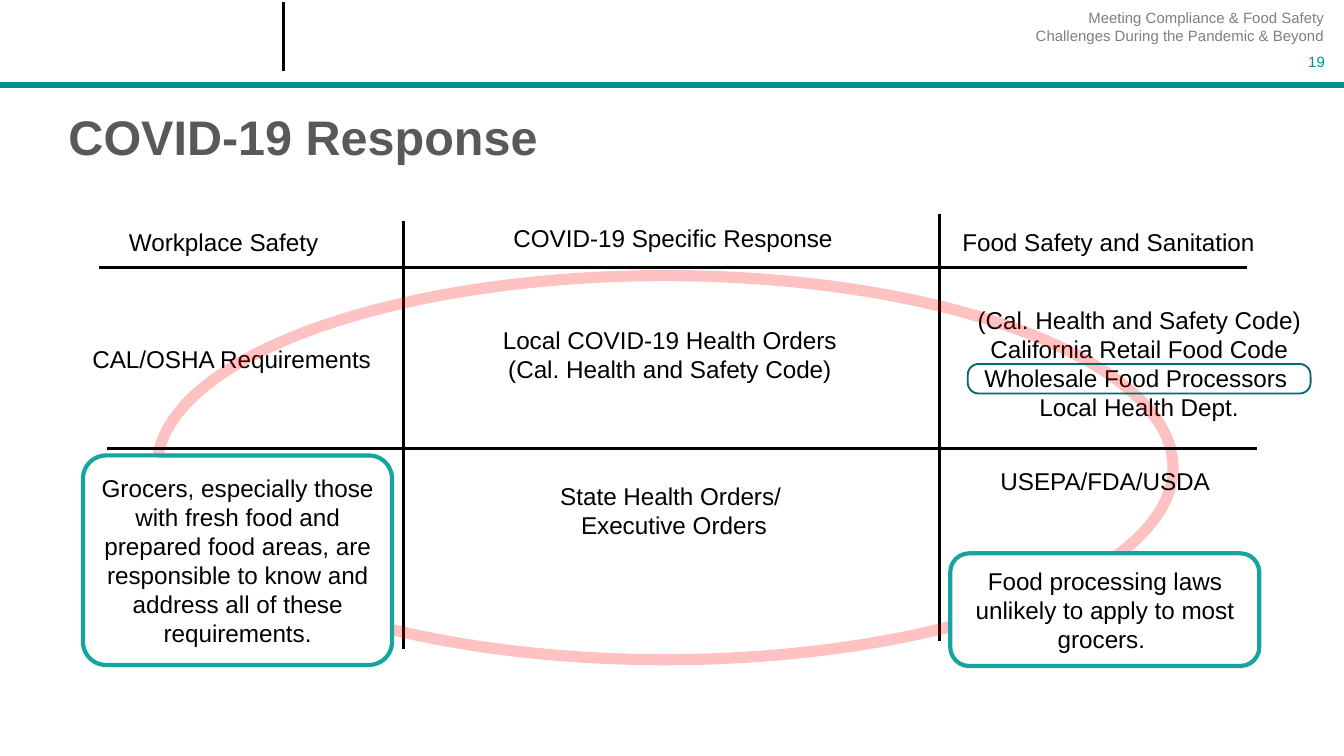
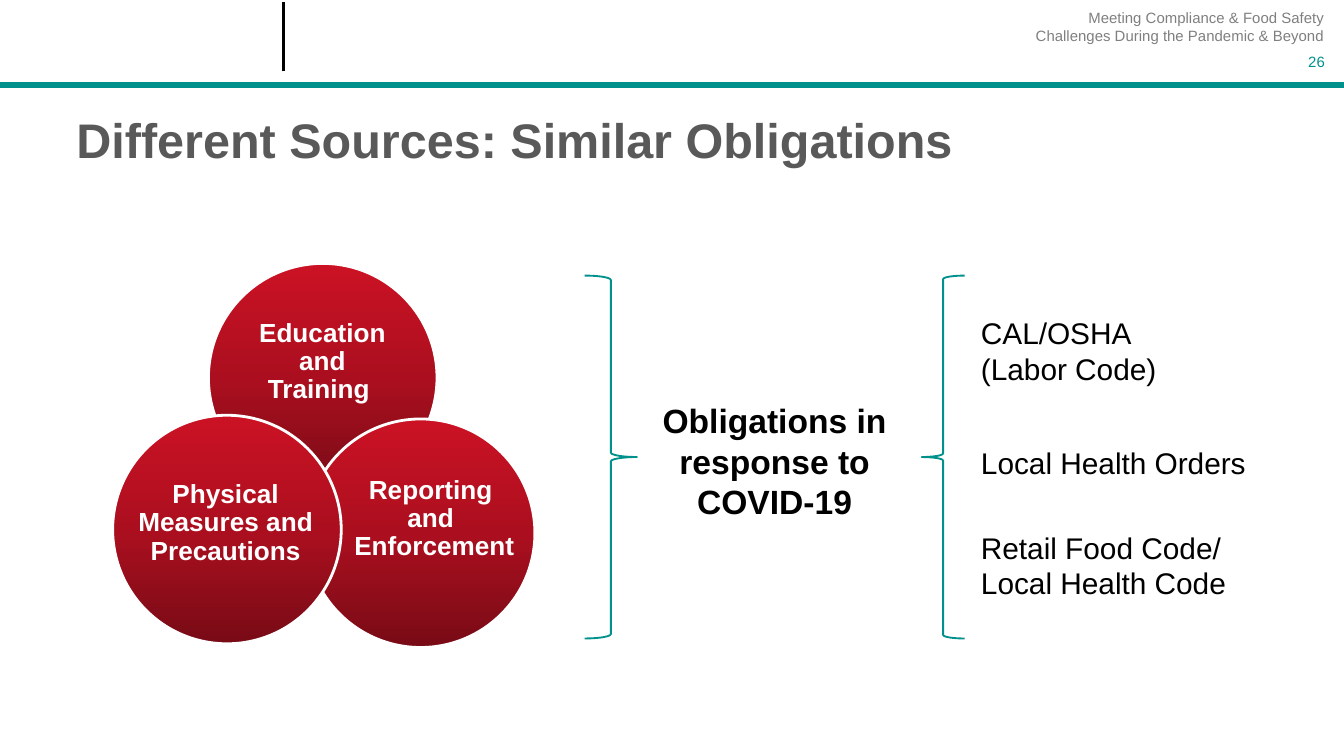
import copy

import pptx
import pptx.dml.color
import pptx.enum.shapes
import pptx.enum.text
import pptx.oxml.ns
import pptx.oxml.xmlchemy
import pptx.util
from lxml import etree

Cm = pptx.util.Cm
Pt = pptx.util.Pt
RGB = pptx.dml.color.RGBColor
SHAPE = pptx.enum.shapes.MSO_SHAPE
ALIGN = pptx.enum.text.PP_ALIGN
ANCHOR = pptx.enum.text.MSO_ANCHOR
qn = pptx.oxml.ns.qn

TEAL = RGB(0x00, 0x91, 0x8D)
AQUA = RGB(0x16, 0xA4, 0xA1)
PINE = RGB(0x00, 0x6B, 0x68)
BLACK = RGB(0, 0, 0)
WHITE = RGB(255, 255, 255)
SLATE = RGB(0x59, 0x59, 0x59)
GREY = RGB(0x7F, 0x7F, 0x7F)
RED = RGB(255, 0, 0)
REDS = [
    (0, RGB(0x78, 0x0B, 0x16)),
    (0.5, RGB(0xAB, 0x0F, 0x1F)),
    (1, RGB(0xCB, 0x12, 0x24)),
]
FONT = "Arial"
HEAD = "Meeting Compliance & Food Safety Challenges During the Pandemic & Beyond"


def write(frame, texts, size, color=BLACK, bold=False, align=ALIGN.CENTER,
          anchor=ANCHOR.TOP, space=None, wrap=True):
    frame.word_wrap = wrap
    frame.auto_size = pptx.enum.text.MSO_AUTO_SIZE.NONE
    frame.vertical_anchor = anchor
    for i, text in enumerate(texts):
        para = frame.paragraphs[0] if i == 0 else frame.add_paragraph()
        para.alignment = align
        if space:
            para.line_spacing = space
        for j, part in enumerate(text.split("\n")):
            if j:
                para.add_line_break()
            run = para.add_run()
            run.text = part
            run.font.name = FONT
            run.font.size = Pt(size)
            run.font.bold = bold
            run.font.color.rgb = color


def label(slide, place, texts, size=13, **style):
    box = slide.shapes.add_textbox(*map(Cm, place))
    write(box.text_frame, texts, size, **style)


def rule(slide, ends, color=BLACK, width=1.5):
    kind = pptx.enum.shapes.MSO_CONNECTOR.STRAIGHT
    line = slide.shapes.add_connector(kind, *map(Cm, ends))
    line.line.color.rgb = color
    line.line.width = Pt(width)
    etree.SubElement(line._element.spPr, qn("a:effectLst"))
    return line


def form(slide, kind, place, color, width, fill=None, adjust=None):
    shape = slide.shapes.add_shape(kind, *map(Cm, place))
    shape.shadow.inherit = False
    if fill is None:
        shape.fill.background()
    else:
        shape.fill.solid()
        shape.fill.fore_color.rgb = fill
    shape.line.color.rgb = color
    shape.line.width = Pt(width)
    if adjust is not None:
        shape.adjustments[0] = adjust
    return shape


def callout(slide, place, text, adjust=None):
    shape = form(slide, SHAPE.ROUNDED_RECTANGLE, place, AQUA, 2.25, WHITE, adjust)
    frame = shape.text_frame
    frame.margin_left = frame.margin_right = Cm(0.22)
    write(frame, [text], 13, anchor=ANCHOR.MIDDLE)


def ring(slide, place):
    shape = form(slide, SHAPE.OVAL, place, RED, 6)
    tint = shape.line._ln.find(".//" + qn("a:srgbClr"))
    etree.SubElement(tint, qn("a:alpha"), val="24000")


def disc(slide, left, top):
    shape = form(slide, SHAPE.OVAL, (left, top, 4.32, 4.32), WHITE, 1.5)
    shape.fill.gradient()
    shape.fill.gradient_angle = 90
    stops = shape._element.spPr.find(".//" + qn("a:gsLst"))
    stops.append(copy.deepcopy(stops[0]))
    for stop, (point, color) in zip(shape.fill.gradient_stops, REDS):
        stop.position = point
        stop.color.rgb = color


def bands(slide):
    tree = slide.slide_layout.shapes._spTree
    for ends, color, width in (
        ((0, 1.61, 25.4, 1.61), TEAL, 3),
        ((5.36, 1.35, 5.36, 0.03), BLACK, 2),
    ):
        tree.append(rule(slide, ends, color, width)._element)


def start(deck, title, left, top, number):
    slide = deck.slides.add_slide(deck.slide_layouts[5])
    head = slide.shapes.title
    head.left, head.top, head.width, head.height = map(Cm, (left, top, 23.01, 1.7))
    write(head.text_frame, [title], 26, SLATE, True, ALIGN.LEFT, ANCHOR.MIDDLE, 0.9)
    side = {"align": ALIGN.RIGHT, "anchor": ANCHOR.MIDDLE}
    label(slide, (19.13, 0.13, 6.15, 0.76), [HEAD], 8, color=GREY, **side)
    label(slide, (19.02, 0.94, 6.27, 0.46), [number], 8, color=TEAL, **side)
    return slide


def response(deck):
    slide = start(deck, "COVID-19 Response", 1.04, 1.8, "19")
    bands(slide)
    rule(slide, (7.62, 4.17, 7.62, 12.27))
    rule(slide, (17.75, 4.04, 17.75, 12.12))
    code = "(Cal. Health and Safety Code)"
    label(slide, (8.86, 6.02, 7.59, 1.35), ["Local COVID-19 Health Orders", code])
    label(slide, (17.73, 5.64, 7.59, 2.46), [
        code, "California Retail Food Code",
        "Wholesale Food Processors ", "Local Health Dept."])
    label(slide, (0.58, 6.38, 7.59, 0.81), ["CAL/OSHA Requirements"])
    ring(slide, (2.97, 5.21, 19.2, 7.26))
    rule(slide, (2.03, 8.48, 23.75, 8.48))
    label(slide, (8.94, 8.97, 7.59, 1.35), ["State Health Orders/ ", "Executive Orders"])
    label(slide, (17.86, 8.69, 6.05, 0.81), ["USEPA/FDA/USDA"])
    label(slide, (0.43, 4.17, 7.59, 0.81), ["Workplace Safety"])
    label(slide, (8.92, 4.09, 7.59, 0.81), ["COVID-19 Specific Response"])
    label(slide, (17.86, 4.17, 6.17, 0.81), ["Food Safety and Sanitation"])
    rule(slide, (1.88, 5.05, 23.57, 5.05))
    callout(slide, (1.57, 8.61, 5.84, 3.96),
            "Grocers, especially those with fresh food and prepared food areas, "
            "are responsible to know and address all of these requirements.", 0.11)
    form(slide, SHAPE.ROUNDED_RECTANGLE, (18.29, 6.88, 6.48, 0.56), PINE, 1, adjust=0.37)
    callout(slide, (17.96, 10.46, 5.84, 2.13),
            "Food processing laws unlikely to apply to most grocers. ")


def sources(deck):
    slide = start(deck, "Different Sources: Similar Obligations", 1.19, 1.85, "26")
    for left, top in ((3.94, 4.98), (5.79, 7.92), (2.13, 7.85)):
        disc(slide, left, top)
    form(slide, SHAPE.RIGHT_BRACE, (11.05, 5.21, 0.99, 6.86), TEAL, 1)
    label(slide, (11.91, 7.44, 5.46, 2.57),
          ["Obligations in response to COVID-19"], 18, bold=True)
    form(slide, SHAPE.LEFT_BRACE, (17.42, 5.21, 0.81, 6.86), TEAL, 1)
    for top, high, text in (
        (5.82, 1.63, "CAL/OSHA \n(Labor Code)"),
        (8.28, 0.94, "Local Health Orders"),
        (9.88, 1.63, "Retail Food Code/ \nLocal Health Code"),
    ):
        label(slide, (18.29, top, 6.43, high), [text], 16, align=ALIGN.LEFT)
    for left, top, wide, text, wrap in (
        (2.31, 8.97, 3.91, "Physical Measures and Precautions", True),
        (6.43, 8.89, 3.56, "Reporting \nand \nEnforcement", False),
        (4.62, 5.92, 2.95, "Education and Training ", True),
    ):
        label(slide, (left, top, wide, 1.88), [text], 14,
              color=WHITE, bold=True, space=0.9, wrap=wrap)


def main():
    deck = pptx.Presentation()
    deck.slide_width = Cm(25.4)
    deck.slide_height = Cm(14.29)
    response(deck)
    sources(deck)
    deck.save("out.pptx")


if __name__ == "__main__":
    main()
